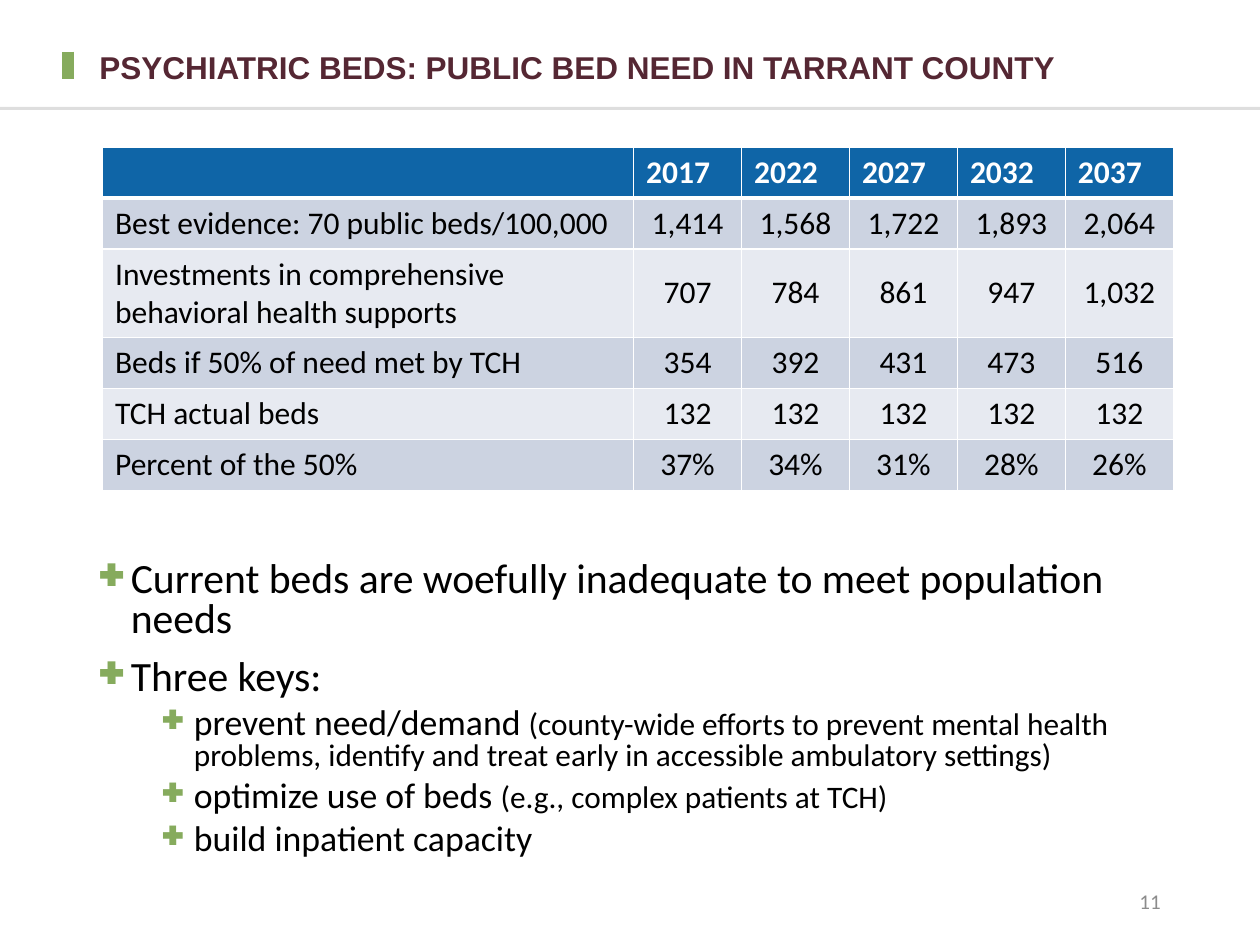
from lxml.etree import SubElement
from pptx import Presentation
from pptx.dml.color import RGBColor as Rgb
from pptx.enum.shapes import MSO_CONNECTOR as Link
from pptx.enum.text import MSO_ANCHOR as Anchor, PP_ALIGN as Align
from pptx.oxml import parse_xml
from pptx.oxml.ns import nsdecls, qn
from pptx.util import Pt

COLORS = {
    "green": "86AB5D", "wine": "552733", "blue": "0F65A7", "band": "CCD3E1",
    "pale": "E7EAF1", "black": "000000", "white": "FFFFFF", "gray": "8C8C8C",
}

HEAD = ["", "2017", "2022", "2027", "2032", "2037"]
ROWS = [
    ["Best evidence: 70 public beds/100,000",
     "1,414", "1,568", "1,722", "1,893", "2,064"],
    ["Investments in comprehensive behavioral health supports",
     "707", "784", "861", "947", "1,032"],
    ["Beds if 50% of need met by TCH", "354", "392", "431", "473", "516"],
    ["TCH actual beds"] + ["132"] * 5,
    ["Percent of the 50%", "37%", "34%", "31%", "28%", "26%"],
]

# Level, main words, smaller aside
POINTS = [
    (0, "Current beds are woefully inadequate to meet population needs", ""),
    (0, "Three keys:", ""),
    (1, "prevent need/demand ", "(county-wide efforts to prevent mental health "
        "problems, identify and treat early in accessible ambulatory settings)"),
    (1, "optimize use of beds ", "(e.g., complex patients at TCH)"),
    (1, "build inpatient capacity", ""),
]
# Size, space before and left indent of each level
LEVELS = [(23.8, 10, 18), (20.4, 5, 54)]


def color(name):
    return Rgb.from_string(COLORS[name])


def style(font, size, name, bold=False, face="Calibri"):
    font.size, font.name, font.bold = Pt(size), face, bold
    font.color.rgb = color(name)


def add_line(slide, ends, name, width, alpha=None):
    line = slide.shapes.add_connector(Link.STRAIGHT, *map(Pt, ends))
    line.line.color.rgb = color(name)
    line.line.width = Pt(width)
    if alpha:
        tone = line.line.fill._xPr.find(".//" + qn("a:srgbClr"))
        SubElement(tone, qn("a:alpha"), val=str(alpha * 1000))
    SubElement(line._element.spPr, qn("a:effectLst"))


def add_box(slide, area, anchor=Anchor.TOP):
    frame = slide.shapes.add_textbox(*map(Pt, area)).text_frame
    frame.word_wrap = True
    frame.vertical_anchor = anchor
    return frame


def add_label(slide, area, text, **look):
    frame = add_box(slide, area, Anchor.MIDDLE)
    frame.text = text
    style(frame.paragraphs[0].font, **look)
    return frame.paragraphs[0]


def set_edges(cell, top, bottom):
    props = cell._tc.get_or_add_tcPr()
    edges = [("lnL", 1), ("lnR", 1), ("lnT", top), ("lnB", bottom)]
    for spot, (tag, width) in enumerate(edges):
        props.insert(spot, parse_xml(
            f'<a:{tag} {nsdecls("a")} w="{Pt(width)}"><a:solidFill>'
            f'<a:srgbClr val="{COLORS["white"]}"/></a:solidFill></a:{tag}>'))


def add_grid(slide):
    data = [HEAD] + ROWS
    area = map(Pt, (58.6, 83.9, 612, 175.2))
    table = slide.shapes.add_table(len(data), len(HEAD), *area).table
    for col, part in enumerate(table.columns):
        part.width = Pt(61.7 if col else 303.5)
    for row, words in enumerate(data):
        table.rows[row].height = Pt(29.2)
        fill = ("band" if row % 2 else "pale") if row else "blue"
        for col, text in enumerate(words):
            cell = table.cell(row, col)
            cell.text = text
            cell.fill.solid()
            cell.fill.fore_color.rgb = color(fill)
            set_edges(cell, 3 if row == 1 else 1, 1 if row else 3)
            para = cell.text_frame.paragraphs[0]
            style(para.font, 18, "black" if row else "white", not row)
            if row and col:
                para.alignment = Align.CENTER
                cell.vertical_anchor = Anchor.MIDDLE


def add_bullet(para, left):
    props = para._p.get_or_add_pPr()
    props.set("marL", str(Pt(left)))
    props.set("indent", str(Pt(-18)))
    tint = SubElement(props, qn("a:buClr"))
    SubElement(tint, qn("a:srgbClr"), val=COLORS["green"])
    SubElement(props, qn("a:buChar"), char="✚")


def add_points(slide):
    frame = add_box(slide, (49.7, 317.5, 620.6, 183.6))
    for spot, (level, main_text, aside) in enumerate(POINTS):
        size, gap, left = LEVELS[level]
        para = frame.add_paragraph() if spot else frame.paragraphs[0]
        para.level = level
        para.line_spacing = 0.8
        para.space_before = Pt(gap if spot else 0)
        add_bullet(para, left)
        for text, points in ((main_text, size), (aside, 17.9)):
            if text:
                run = para.add_run()
                run.text = text
                style(run.font, points, "black")


def main():
    deck = Presentation()
    deck.slide_width, deck.slide_height = Pt(720), Pt(540)
    slide = deck.slides.add_slide(deck.slide_layouts[6])

    # Title with its marker and rule
    add_line(slide, (38.9, 29.5, 38.9, 45.4), "green", 7)
    add_line(slide, (0, 61.9, 720, 61.9), "black", 1.75, alpha=12)
    title = add_label(slide, (49.7, 19.4, 620.6, 41),
                      "PSYCHIATRIC BEDS: PUBLIC BED NEED IN TARRANT COUNTY",
                      size=18, name="wine", bold=True, face="Arial")
    title.line_spacing = 0.9

    # Bed counts and conclusions
    add_grid(slide)
    add_points(slide)

    # Page number
    page = add_label(slide, (508.3, 500.4, 162, 28.8), "11",
                     size=12, name="gray")
    page.alignment = Align.RIGHT

    deck.save("out.pptx")


if __name__ == "__main__":
    main()
